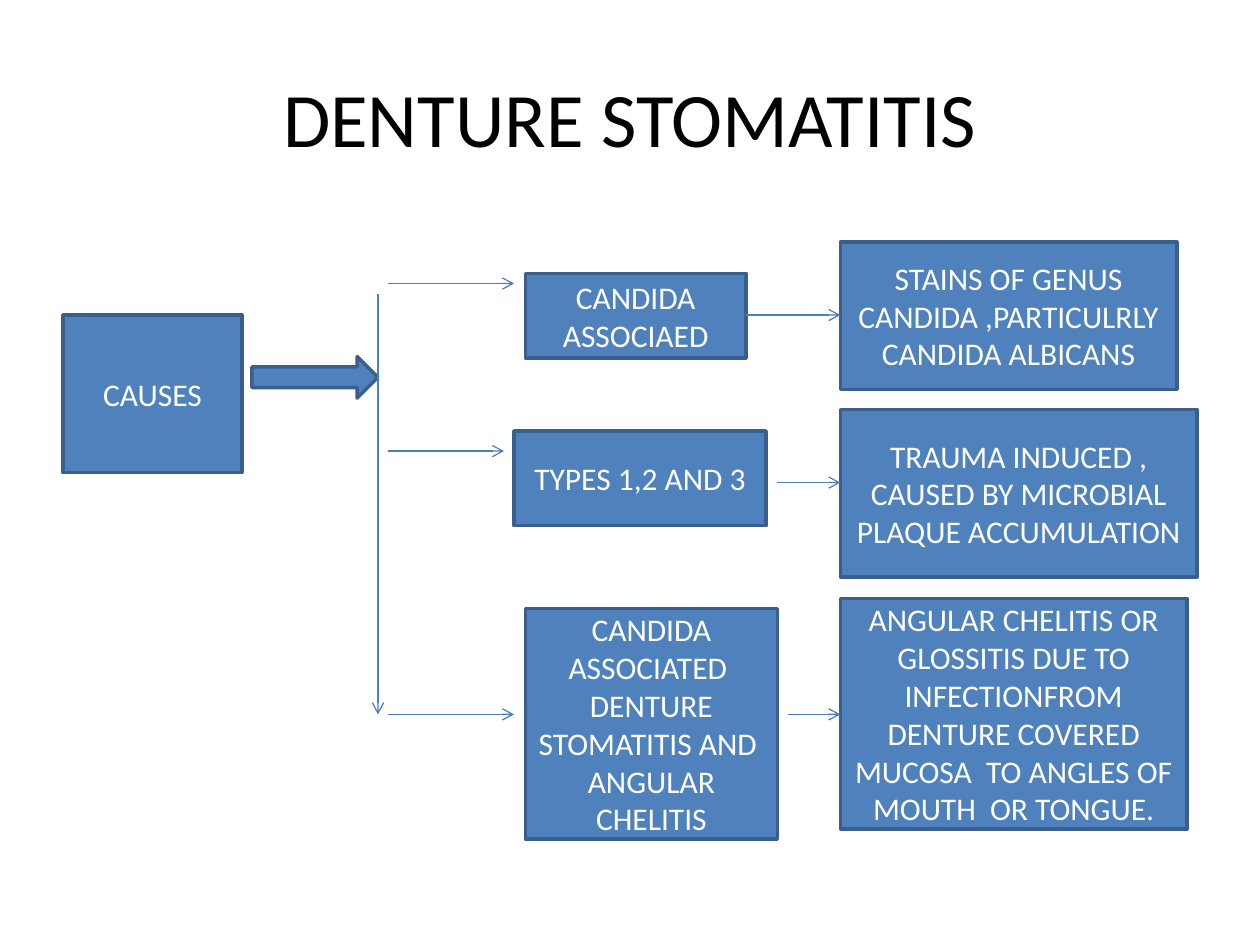
from lxml.etree import SubElement as Sub
from pptx import Presentation
from pptx.dml.color import RGBColor
from pptx.enum.shapes import MSO_CONNECTOR as Conn, MSO_SHAPE as Kind
from pptx.enum.text import MSO_ANCHOR as Anchor, PP_ALIGN as Align
from pptx.oxml.ns import qn
from pptx.util import Inches, Pt

BLACK = RGBColor(0x00, 0x00, 0x00)
WHITE = RGBColor(0xFF, 0xFF, 0xFF)
BLUE = RGBColor(0x4F, 0x81, 0xBD)
EDGE = RGBColor(0x3A, 0x5F, 0x8C)
LINE = RGBColor(0x4B, 0x7E, 0xBC)


def write(shape, text, size, color):
    frame = shape.text_frame
    frame.word_wrap = True
    frame.vertical_anchor = Anchor.MIDDLE
    para = frame.paragraphs[0]
    para.alignment = Align.CENTER
    run = para.add_run()
    run.text = text
    run.font.name = "Calibri"
    run.font.size = Pt(size)
    run.font.color.rgb = color


def block(kind, *place):
    shape = shapes.add_shape(kind, *map(Inches, place))
    shape.shadow.inherit = False
    shape.fill.solid()
    shape.fill.fore_color.rgb = BLUE
    shape.line.color.rgb = EDGE
    shape.line.width = Pt(2)
    return shape


deck = Presentation()
deck.slide_width, deck.slide_height = Inches(10), Inches(7.5)
shapes = deck.slides.add_slide(deck.slide_layouts[6]).shapes

# Title
title = shapes.add_textbox(Inches(0.5), Inches(0.3), Inches(9), Inches(1.25))
write(title, "DENTURE STOMATITIS", 44, BLACK)

# Boxes: cause, then each type with its origin
boxes = [
    ("CAUSES", 0.5, 2.5, 1.42, 1.25),
    ("CANDIDA ASSOCIAED", 4.17, 2.17, 1.75, 0.67),
    ("STAINS OF GENUS CANDIDA ,PARTICULRLY CANDIDA ALBICANS",
     6.67, 1.92, 2.67, 1.17),
    ("TYPES 1,2 AND 3", 4.08, 3.42, 2, 0.75),
    ("TRAUMA INDUCED , CAUSED BY MICROBIAL PLAQUE ACCUMULATION",
     6.67, 3.25, 2.83, 1.33),
    ("CANDIDA ASSOCIATED  DENTURE STOMATITIS AND  ANGULAR CHELITIS",
     4.17, 4.83, 2, 1.83),
    ("ANGULAR CHELITIS OR GLOSSITIS DUE TO INFECTIONFROM DENTURE COVERED "
     "MUCOSA  TO ANGLES OF MOUTH  OR TONGUE.", 6.67, 4.75, 2.75, 1.83),
]
for text, *place in boxes:
    write(block(Kind.RECTANGLE, *place), text, 18, WHITE)

# Block arrow from the cause to the trunk
block(Kind.RIGHT_ARROW, 2, 2.83, 1, 0.33)

# Thin arrows: trunk, branches to the types, links to the origins
arrows = [
    (3, 2.33, 3, 5.67),
    (3.08, 2.25, 4.08, 2.25),
    (3.08, 3.58, 4, 3.58),
    (3.08, 5.67, 4.08, 5.67),
    (5.92, 2.5, 6.67, 2.5),
    (6.17, 3.83, 6.67, 3.83),
    (6.25, 5.67, 6.67, 5.67),
]
for ends in arrows:
    arrow = shapes.add_connector(Conn.STRAIGHT, *map(Inches, ends))
    arrow.line.color.rgb = LINE
    arrow.line.width = Pt(0.75)
    Sub(arrow.line._get_or_add_ln(), qn("a:tailEnd"), type="arrow")
    Sub(arrow._element.spPr, qn("a:effectLst"))

deck.save("out.pptx")
